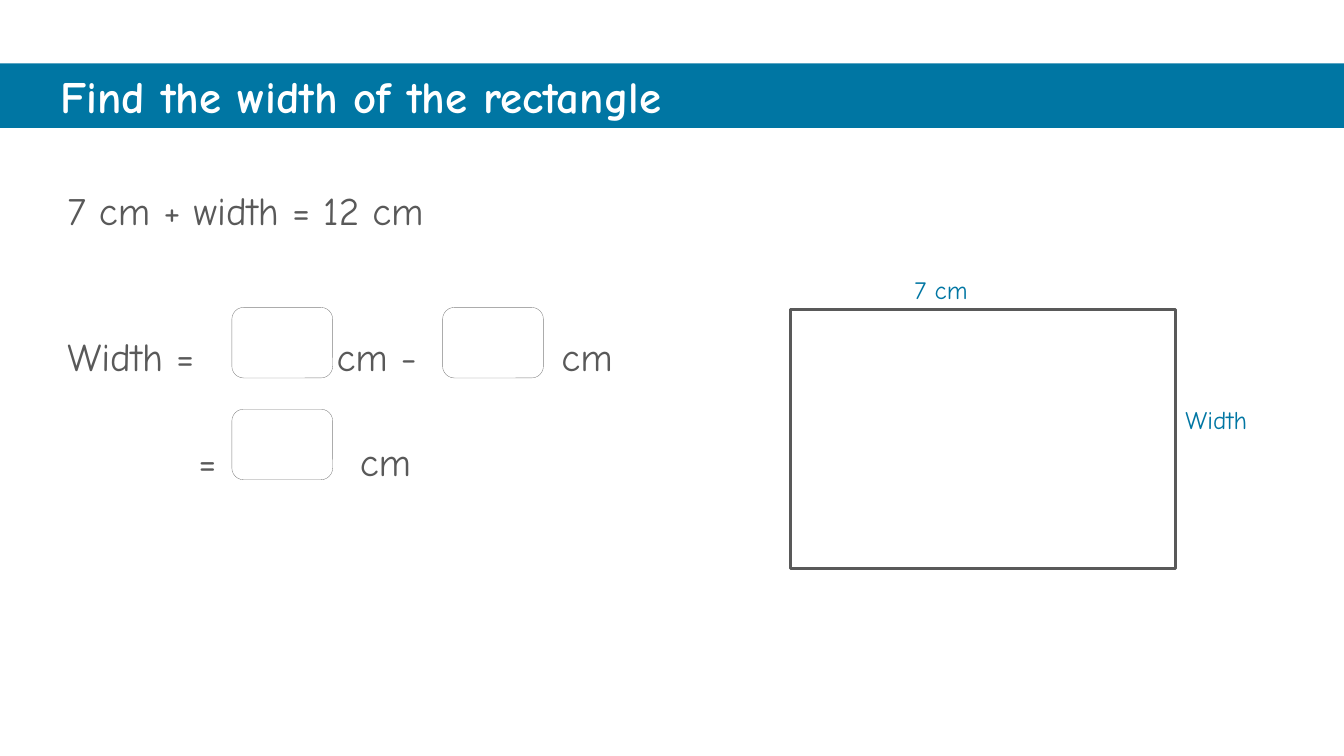
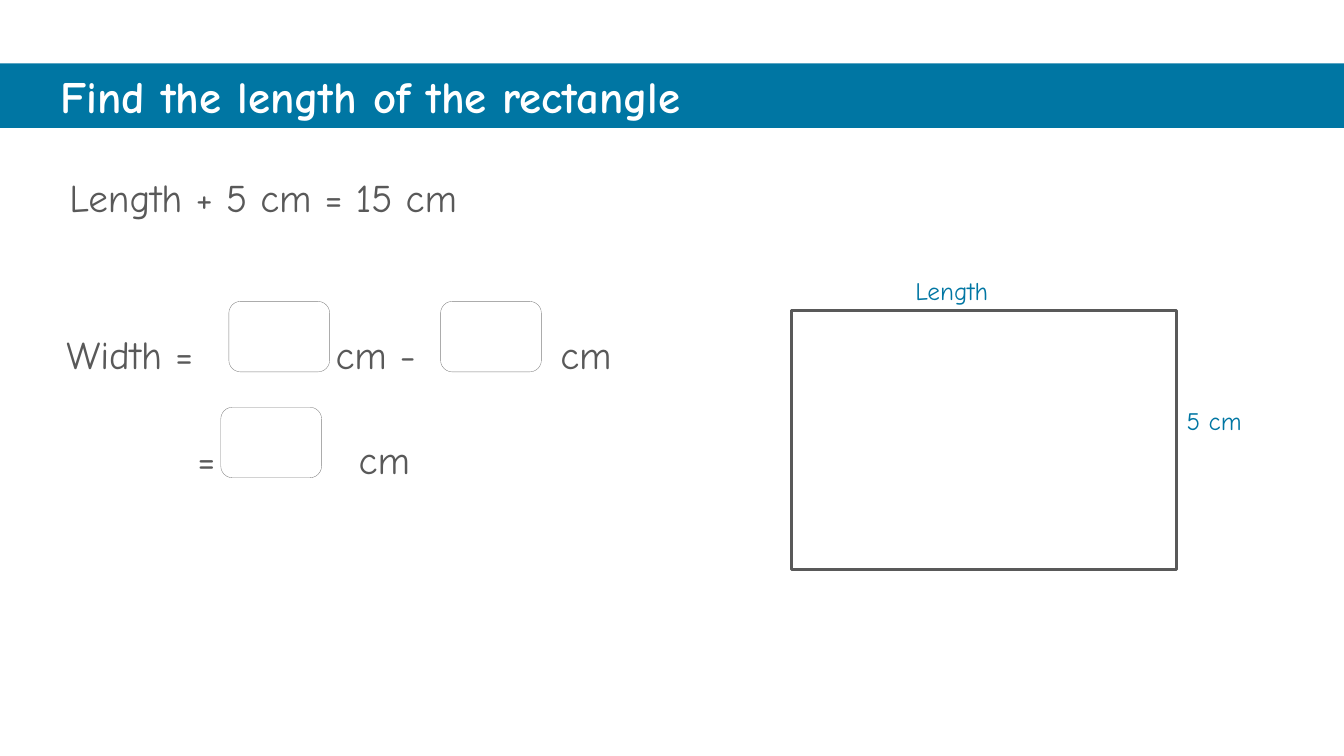
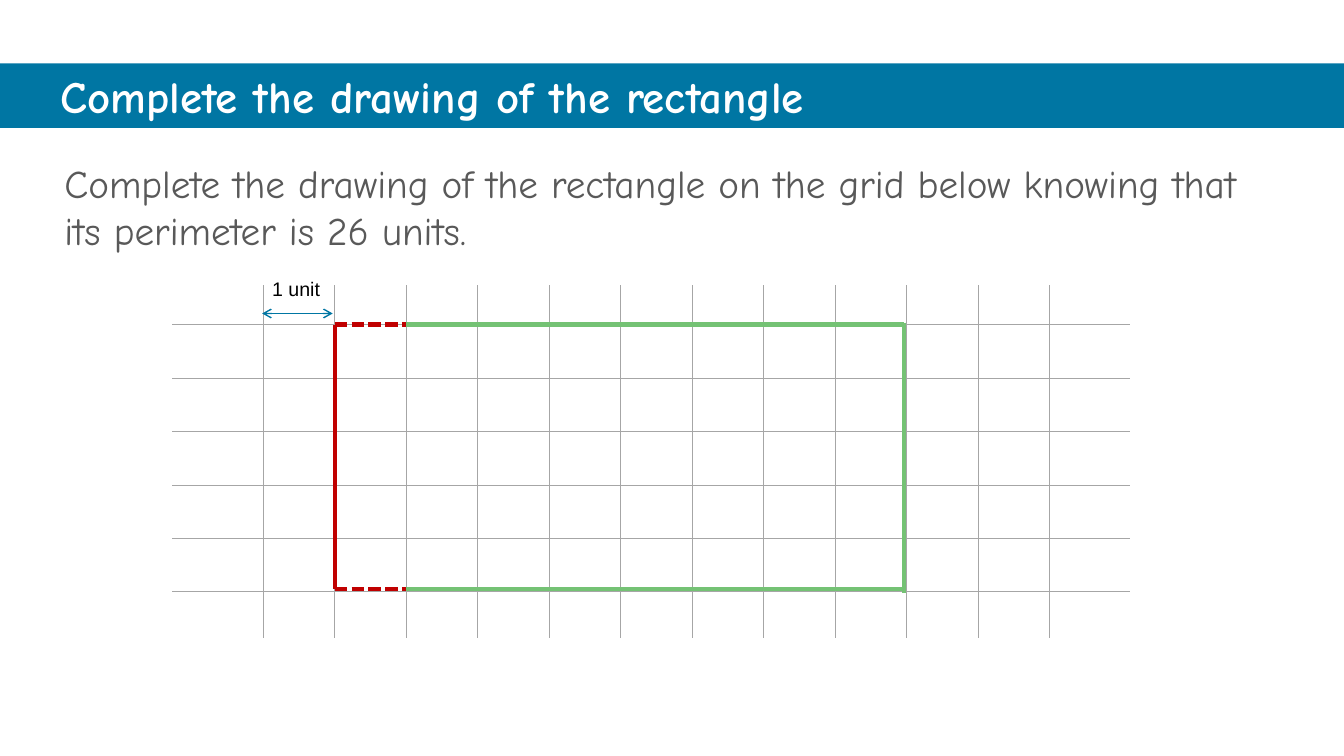
from lxml.etree import SubElement
from pptx import Presentation
from pptx.dml.color import RGBColor
from pptx.enum.dml import MSO_LINE
from pptx.enum.shapes import MSO_CONNECTOR, MSO_SHAPE
from pptx.enum.text import MSO_ANCHOR, MSO_AUTO_SIZE, PP_ALIGN
from pptx.oxml.ns import qn
from pptx.util import Inches, Pt

BLUE = RGBColor(0x00, 0x76, 0xA3)
WHITE = RGBColor(0xFF, 0xFF, 0xFF)
BLACK = RGBColor(0x00, 0x00, 0x00)
DARK = RGBColor(0x59, 0x59, 0x59)
MID = RGBColor(0x80, 0x80, 0x80)
PALE = RGBColor(0xA6, 0xA6, 0xA6)
RED = RGBColor(0xC0, 0x00, 0x00)
GREEN = RGBColor(0x74, 0xC2, 0x74)
FONT = "Comic Neue"

TITLE = {"name": FONT, "size": Pt(32), "bold": True, "color": WHITE}
BODY = {"name": FONT, "size": Pt(28), "color": DARK}
LABEL = {"name": FONT, "size": Pt(18), "color": BLUE}
UNIT = {"name": "Arial", "size": Pt(14), "color": BLACK}

EQUATION_SPACING = {"line_spacing": 1.07, "space_after": Pt(8)}
WORKING_SPACING = {"line_spacing": 2.0, "space_after": Pt(8)}
WORKING_LINES = [("Width =\tcm -\tcm", (2.67, 4.9)), ("\t=\tcm", (1.3, 2.9))]

GRID_ROWS, GRID_COLUMNS = 6, 12
ROW_STEP, COLUMN_STEP = 0.53, 7.8 / 11

PROBLEMS = [
    {
        "title": "Find the width of the rectangle",
        "equation": ("7 cm + width = 12 cm", 0.57, 1.77),
        "working": (0.57, 2.78),
        "blanks": [(1.73, 0.27), (3.82, 0.27), (1.73, 1.28)],
        "rectangle": (7.84, 3.07),
        "sides": ("7 cm", "Width"),
    },
    {
        "title": "Find the length of the rectangle",
        "equation": ("Length + 5 cm = 15 cm", 0.59, 1.64),
        "working": (0.56, 2.76),
        "blanks": [(1.71, 0.23), (3.81, 0.23), (1.63, 1.28)],
        "rectangle": (7.85, 3.08),
        "sides": ("Length", "5 cm"),
    },
]


def apply_format(target, values):
    for key, value in values.items():
        if key == "color":
            target.color.rgb = value
        else:
            setattr(target, key, value)


def add_tabs(paragraph, stops):
    tabs = SubElement(paragraph._p.get_or_add_pPr(), qn("a:tabLst"))
    for stop in stops:
        SubElement(tabs, qn("a:tab"), pos=str(Inches(stop)), algn="l")


def add_text(slide, left, top, width, height, lines, font, spacing=None, wrap=True):
    box = slide.shapes.add_textbox(
        Inches(left), Inches(top), Inches(width), Inches(height))
    frame = box.text_frame
    frame.word_wrap = wrap
    for index, (text, stops) in enumerate(lines):
        paragraph = frame.add_paragraph() if index else frame.paragraphs[0]
        if stops:
            add_tabs(paragraph, stops)
        paragraph.text = text
        apply_format(paragraph, spacing or {})
        apply_format(paragraph.font, font)


def add_outline(slide, kind, left, top, width, height, line):
    outline = slide.shapes.add_shape(
        kind, Inches(left), Inches(top), Inches(width), Inches(height))
    outline.shadow.inherit = False
    apply_format(outline.line, line)
    return outline


def add_line(slide, start, end, line, arrows=False):
    points = [Inches(value) for value in (*start, *end)]
    connector = slide.shapes.add_connector(MSO_CONNECTOR.STRAIGHT, *points)
    apply_format(connector.line, line)
    if arrows:
        for tag in ("a:headEnd", "a:tailEnd"):
            SubElement(connector.line._get_or_add_ln(), qn(tag), type="arrow")
    SubElement(connector._element.spPr, qn("a:effectLst"))


def start_slide(prs, heading):
    slide = prs.slides.add_slide(prs.slide_layouts[5])
    band = slide.shapes.title
    apply_format(band, {"left": 0, "top": Inches(0.63),
                        "width": prs.slide_width, "height": Inches(0.64)})
    band.fill.solid()
    band.fill.fore_color.rgb = BLUE
    frame = band.text_frame
    frame.text = heading
    apply_format(frame, {
        "margin_left": Inches(0.6), "margin_right": Inches(0.1),
        "margin_top": Inches(0.05), "margin_bottom": Inches(0.05),
        "vertical_anchor": MSO_ANCHOR.TOP, "auto_size": MSO_AUTO_SIZE.NONE,
        "word_wrap": True})
    paragraph = frame.paragraphs[0]
    paragraph.alignment = PP_ALIGN.LEFT
    apply_format(paragraph.font, TITLE)
    return slide


def add_working(slide, left, top, blanks):
    add_text(slide, left, top, 7.2, 1.96, WORKING_LINES, BODY, WORKING_SPACING)
    for across, down in blanks:
        blank = add_outline(slide, MSO_SHAPE.ROUNDED_RECTANGLE,
                            left + across, top + down, 1, 0.7,
                            {"color": MID, "width": Pt(0.25)})
        blank.fill.solid()
        blank.fill.fore_color.rgb = WHITE


def add_labelled_rectangle(slide, left, top, sides):
    width, height = 3.82, 2.57
    rectangle = add_outline(slide, MSO_SHAPE.RECTANGLE, left, top, width, height,
                            {"color": DARK, "width": Pt(2.25)})
    rectangle.fill.background()
    top_side, right_side = sides
    for text, across, down in ((top_side, 1.13, -0.4), (right_side, width, 0.89)):
        add_text(slide, left + across, top + down, 1, 0.4,
                 [(text, None)], LABEL, wrap=False)


def add_problem_slide(prs, problem):
    slide = start_slide(prs, problem["title"])
    equation, left, top = problem["equation"]
    add_text(slide, left, top, 6.66, 0.58, [(equation, None)], BODY, EQUATION_SPACING)
    add_working(slide, *problem["working"], problem["blanks"])
    add_labelled_rectangle(slide, *problem["rectangle"], problem["sides"])


def add_grid(slide, left, top, width, height):
    thin = {"color": PALE, "width": Pt(0.25)}
    for row in range(GRID_ROWS):
        y = top + 0.39 + row * ROW_STEP
        add_line(slide, (left, y), (left + width, y), thin)
    for column in range(GRID_COLUMNS):
        x = left + 0.9 + column * COLUMN_STEP
        add_line(slide, (x, top), (x, top + height), thin)


def add_unit_marker(slide, left, top):
    add_line(slide, (left, top + 0.41), (left + 0.7, top + 0.41),
             {"color": BLUE, "width": Pt(1)}, arrows=True)
    add_text(slide, left, top, 0.75, 0.34, [("1 unit", None)], UNIT)


def add_drawn_rectangle(slide, left, top, right, bottom):
    given = {"color": RED, "width": Pt(3)}
    guide = {**given, "dash_style": MSO_LINE.SQUARE_DOT}
    answer = {"color": GREEN, "width": Pt(3)}
    joint = left + COLUMN_STEP
    add_line(slide, (left, top), (left, bottom), given)
    for y in (top, bottom):
        add_line(slide, (left, y), (joint, y), guide)
        add_line(slide, (joint, y), (right, y), answer)
    add_line(slide, (right, top - 0.02), (right, bottom + 0.04), answer)


def add_grid_slide(prs):
    slide = start_slide(prs, "Complete the drawing of the rectangle")
    task = ("Complete the drawing of the rectangle on the grid below "
            "knowing that its perimeter is 26 units.")
    add_text(slide, 0.54, 1.53, 12.12, 1.04, [(task, None)], BODY)
    add_grid(slide, 1.71, 2.83, 9.5, 3.5)
    add_unit_marker(slide, 2.6, 2.7)
    add_drawn_rectangle(slide, 3.32, 3.22, 8.97, 5.84)


def main():
    prs = Presentation()
    prs.slide_width, prs.slide_height = Inches(13.33), Inches(7.5)
    for problem in PROBLEMS:
        add_problem_slide(prs, problem)
    add_grid_slide(prs)
    prs.save("out.pptx")


if __name__ == "__main__":
    main()
